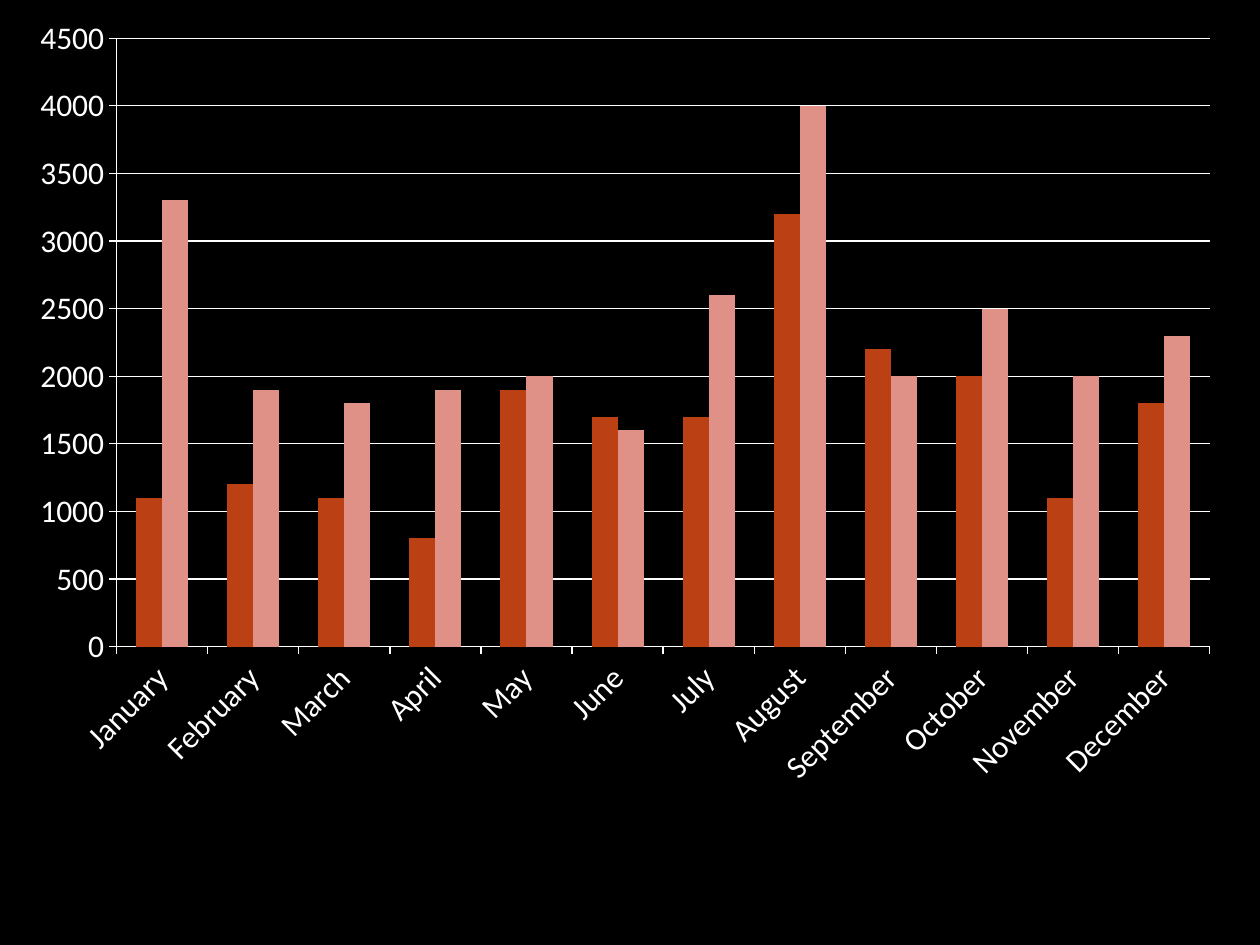
import pptx
import pptx.chart.data
import pptx.dml.color
import pptx.enum.chart
import pptx.oxml
import pptx.oxml.ns
import pptx.util

HUES = {"back": "000000", "text": "FFFFFF", "first": "BB4014", "next": "DF9188"}
MONTHS = ["January", "February", "March", "April", "May", "June", "July",
          "August", "September", "October", "November", "December"]
ROWS = {
    "first": ("Series 1", [1100, 1200, 1100, 800, 1900, 1700,
                           1700, 3200, 2200, 2000, 1100, 1800]),
    "next": ("Series 2", [3300, 1900, 1800, 1900, 2000, 1600,
                          2600, 4000, 2000, 2500, 2000, 2300]),
}
PLOT = {"x": 0.093, "y": 0.042, "w": 0.872, "h": 0.668}
SCALE = {"minimum_scale": 0, "maximum_scale": 4500, "major_unit": 500,
         "has_major_gridlines": True}
TICKS = {"has_title": False,
         "major_tick_mark": pptx.enum.chart.XL_TICK_MARK.OUTSIDE,
         "minor_tick_mark": pptx.enum.chart.XL_TICK_MARK.NONE}


def style(item, values):
    """Set each named value on the item."""
    for name, value in values.items():
        setattr(item, name, value)


def paint(fill, hue):
    """Give a fill one solid colour."""
    fill.solid()
    fill.fore_color.rgb = pptx.dml.color.RGBColor.from_string(HUES[hue])


def rule(line):
    """Draw a thin line in the text colour."""
    line.width = pptx.util.Pt(0.75)
    paint(line.fill, "text")


def frame(chart, shares):
    """Fix the inner plot area at shares of the chart's size."""
    area = chart.element.find(".//" + pptx.oxml.ns.qn("c:plotArea")) \
        if hasattr(chart, "element") else chart._chartSpace.chart.plotArea
    for old in area.findall(pptx.oxml.ns.qn("c:layout")):
        area.remove(old)
    modes = "".join(f'<c:{key}Mode val="edge"/>' for key in "xy")
    sizes = "".join(f'<c:{key} val="{val}"/>' for key, val in shares.items())
    area.insert(0, pptx.oxml.parse_xml(
        f'<c:layout {pptx.oxml.ns.nsdecls("c")}><c:manualLayout>'
        f'<c:layoutTarget val="inner"/>{modes}{sizes}'
        '</c:manualLayout></c:layout>'))


def graph(slide, left, top, wide, high):
    """Place the monthly column chart in the given box."""
    data = pptx.chart.data.CategoryChartData()
    data.categories = MONTHS
    for name, vals in ROWS.values():
        data.add_series(name, vals)
    kind = pptx.enum.chart.XL_CHART_TYPE.COLUMN_CLUSTERED
    chart = slide.shapes.add_chart(kind, left, top, wide, high, data).chart
    style(chart, {"has_title": False, "has_legend": False})
    style(chart.font, {"size": pptx.util.Pt(18), "name": "Calibri"})
    paint(chart.font.fill, "text")
    plot = chart.plots[0]
    style(plot, {"gap_width": 150, "overlap": 0, "vary_by_categories": False})
    for bars, hue in zip(plot.series, ROWS):
        paint(bars.format.fill, hue)
    for axis in (chart.category_axis, chart.value_axis):
        style(axis, TICKS)
        rule(axis.format.line)
        style(axis.tick_labels.font, {"size": pptx.util.Pt(18), "name": "Calibri"})
        paint(axis.tick_labels.font.fill, "text")
    style(chart.value_axis, SCALE)
    rule(chart.value_axis.major_gridlines.format.line)
    turn = chart.category_axis._element.find(".//" + pptx.oxml.ns.qn("a:bodyPr"))
    turn.set("rot", "-2700000")
    frame(chart, PLOT)


def main():
    """Build the slide and save it."""
    deck = pptx.Presentation()
    style(deck, {"slide_width": pptx.util.Inches(10),
                 "slide_height": pptx.util.Inches(7.5)})
    slide = deck.slides.add_slide(deck.slide_layouts[6])
    paint(slide.background.fill, "back")
    graph(slide, 0, 0, int(deck.slide_width * 0.995),
          int(deck.slide_height * 0.964))
    deck.save("out.pptx")


if __name__ == "__main__":
    main()
